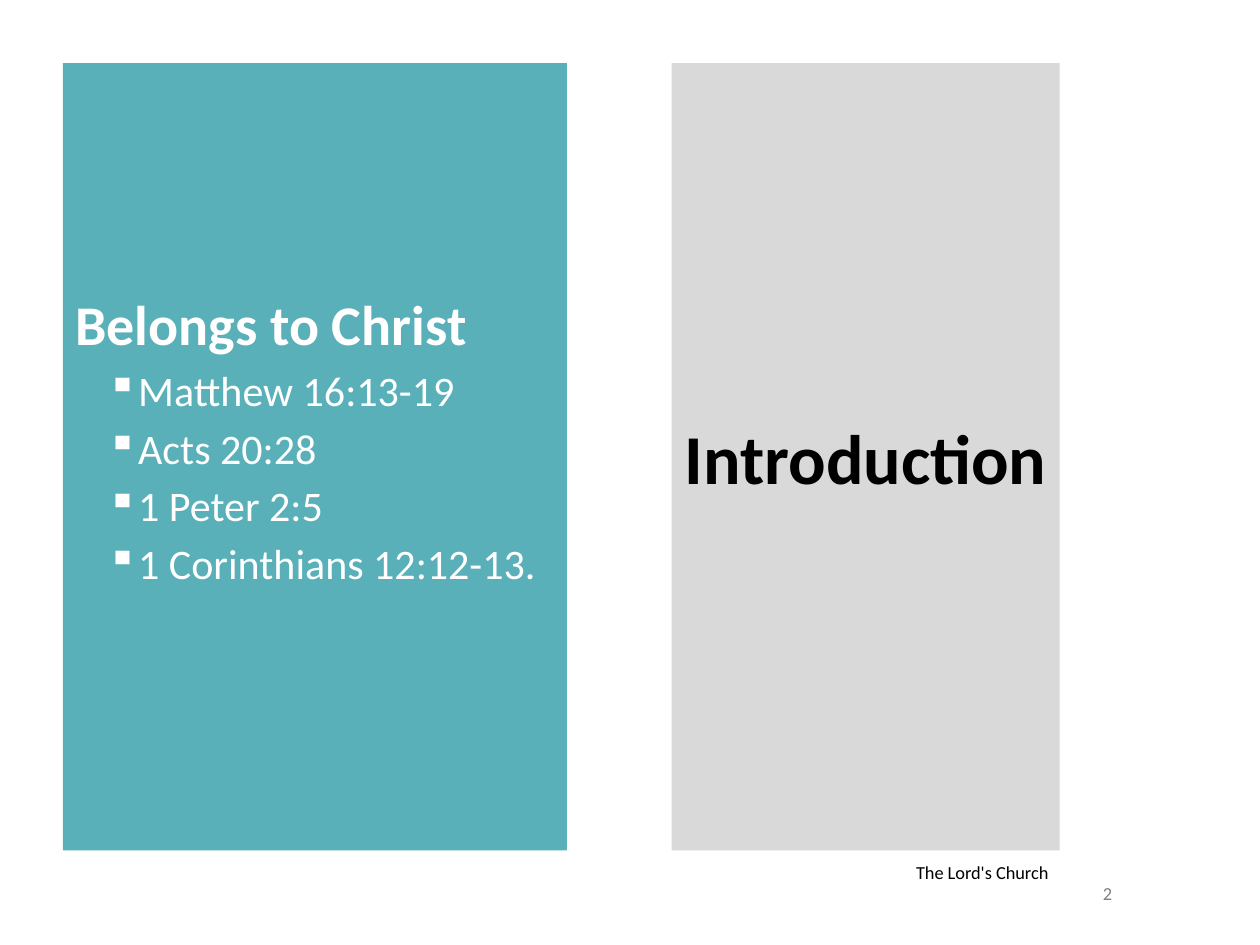
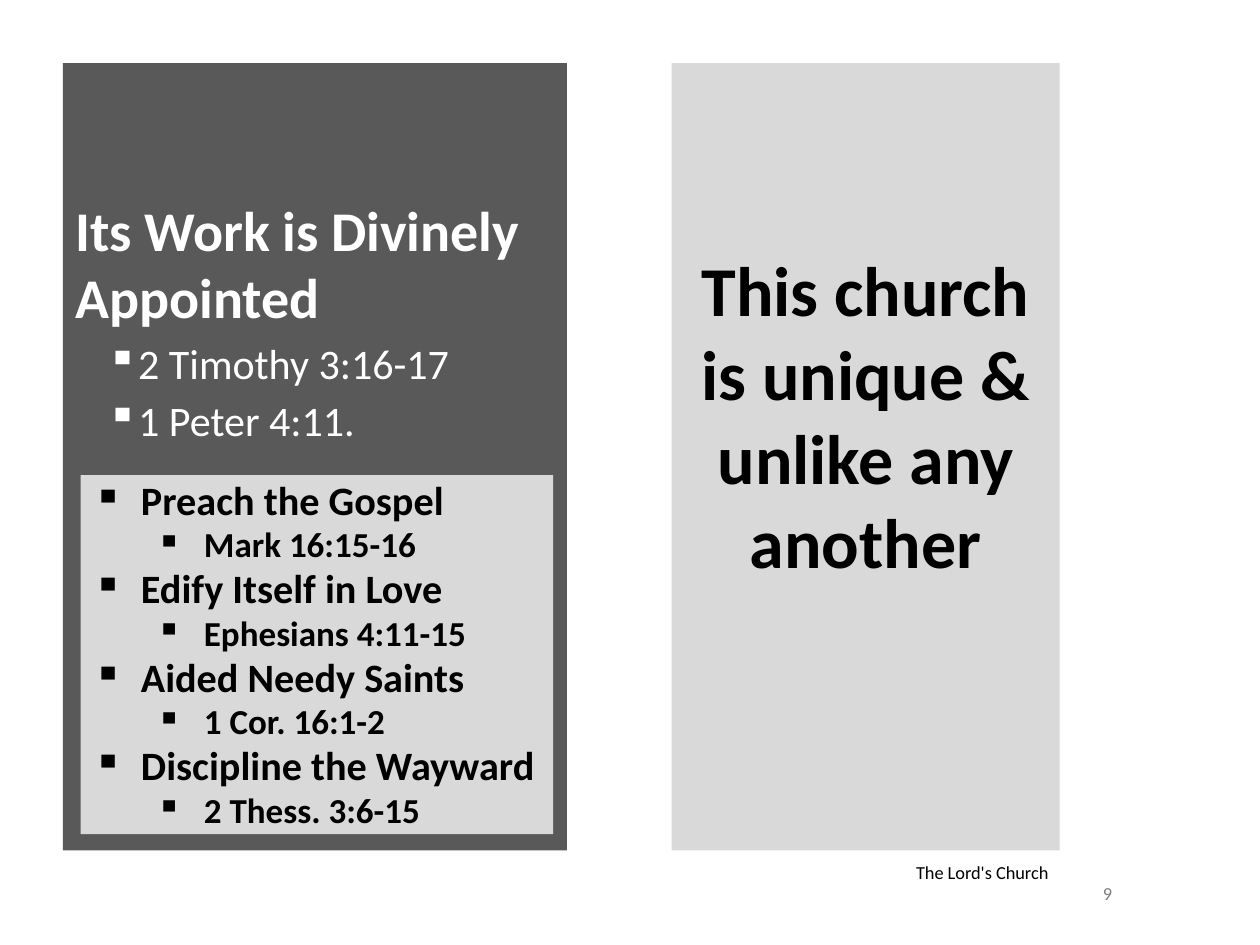
"""Builds two outline slides, each with a reference panel beside a title panel."""
from lxml import etree
from pptx import Presentation
from pptx.dml.color import RGBColor
from pptx.enum.shapes import MSO_SHAPE
from pptx.enum.text import MSO_ANCHOR as ANCHOR, MSO_AUTO_SIZE, PP_ALIGN as ALIGN
from pptx.oxml.ns import qn
from pptx.util import Inches, Pt

COLORS = {"teal": "59B0B9", "dark": "595959", "light": "D9D9D9",
          "white": "FFFFFF", "black": "000000", "number": "808080"}
FONT = "Calibri"
PANEL_TOP, PANEL_HEIGHT = 0.5, 6.25
TITLE_LEFT, TITLE_WIDTH = 5.33, 3.08


class Deck:
    """Holds the presentation, its style and the current slide."""

    def __init__(self):
        self.prs = Presentation()
        self.prs.slide_width, self.prs.slide_height = Inches(10), Inches(7.5)

    def color(self, name):
        return RGBColor.from_string(COLORS[name])

    def start(self, title, number, title_bottom=0.05):
        self.slide = self.prs.slides.add_slide(self.prs.slide_layouts[5])
        heading = self.slide.shapes.title
        heading.left, heading.top = Inches(TITLE_LEFT), Inches(PANEL_TOP)
        heading.width, heading.height = Inches(TITLE_WIDTH), Inches(PANEL_HEIGHT)
        heading.fill.solid()
        heading.fill.fore_color.rgb = self.color("light")
        frame = self.frame(heading, ANCHOR.MIDDLE, bottom=title_bottom)
        self.set_text(frame.paragraphs[0], title, 40, "black", True, ALIGN.CENTER)
        self.label("The Lord's Church", TITLE_LEFT, 6.89, 3.09, "black", ALIGN.RIGHT, ANCHOR.BOTTOM)
        self.label(number, 8.5, 7, 0.58, "number", ALIGN.CENTER, ANCHOR.MIDDLE)

    def frame(self, shape, anchor, top=0.05, bottom=0.05):
        frame = shape.text_frame
        frame.word_wrap = True
        frame.auto_size = MSO_AUTO_SIZE.NONE
        frame.vertical_anchor = anchor
        frame.margin_top, frame.margin_bottom = Inches(top), Inches(bottom)
        return frame

    def set_text(self, paragraph, text, size, color, bold=False, align=ALIGN.LEFT):
        paragraph.text = text
        paragraph.alignment = align
        font = paragraph.font
        font.name, font.size, font.bold = FONT, Pt(size), bold
        font.color.rgb = self.color(color)

    def bullet(self, paragraph, level, margin, hanging):
        paragraph.level = level
        props = paragraph._p.get_or_add_pPr()
        props.set("marL", str(Inches(margin)))
        props.set("indent", str(-Inches(hanging)))
        etree.SubElement(props, qn("a:buChar")).set("char", "▪")

    def label(self, text, left, top, width, color, align, anchor):
        box = self.slide.shapes.add_textbox(Inches(left), Inches(top), Inches(width), Inches(0.17))
        self.set_text(self.frame(box, anchor).paragraphs[0], text, 10.5, color, align=align)

    def block(self, left, top, width, height, fill):
        shape = self.slide.shapes.add_shape(
            MSO_SHAPE.RECTANGLE, Inches(left), Inches(top), Inches(width), Inches(height))
        shape.shadow.inherit = False
        shape.fill.solid()
        shape.fill.fore_color.rgb = self.color(fill)
        shape.line.fill.background()
        return shape

    def references(self, heading, verses, fill, text_top):
        panel = self.block(0.5, PANEL_TOP, 4, PANEL_HEIGHT, fill)
        frame = self.frame(panel, ANCHOR.TOP, top=text_top)
        self.set_text(frame.paragraphs[0], heading, 32, "white", True)
        for verse in verses:
            paragraph = frame.add_paragraph()
            self.bullet(paragraph, 1, 0.45, 0.2)
            paragraph.space_before = Pt(4.2)
            self.set_text(paragraph, verse, 24, "white")

    def duties(self, pairs):
        frame = self.frame(self.block(0.64, 3.77, 3.75, 2.85, "light"), ANCHOR.MIDDLE, 0, 0)
        lines = [line for duty, verse in pairs
                 for line in ((duty, 0, 0.38, 23), (verse, 1, 0.88, 20))]
        for index, (text, level, margin, size) in enumerate(lines):
            paragraph = frame.add_paragraph() if index else frame.paragraphs[0]
            self.bullet(paragraph, level, margin, 0.38)
            paragraph.line_spacing = 0.98
            self.set_text(paragraph, text, size, "black", True)


def main():
    deck = Deck()

    deck.start("Introduction", "2")
    deck.references("Belongs to Christ",
                    ["Matthew 16:13-19", "Acts 20:28", "1 Peter 2:5", "1 Corinthians 12:12-13."],
                    "teal", 1.8)

    deck.start("This church is unique & unlike any another", "9", title_bottom=0.72)
    deck.references("Its Work is Divinely Appointed",
                    ["2 Timothy 3:16-17", "1 Peter 4:11."], "dark", 1.05)
    deck.duties([("Preach the Gospel", "Mark 16:15-16"),
                 ("Edify Itself in Love", "Ephesians 4:11-15"),
                 ("Aided Needy Saints", "1 Cor. 16:1-2"),
                 ("Discipline the Wayward", "2 Thess. 3:6-15")])

    deck.prs.save("out.pptx")


if __name__ == "__main__":
    main()
